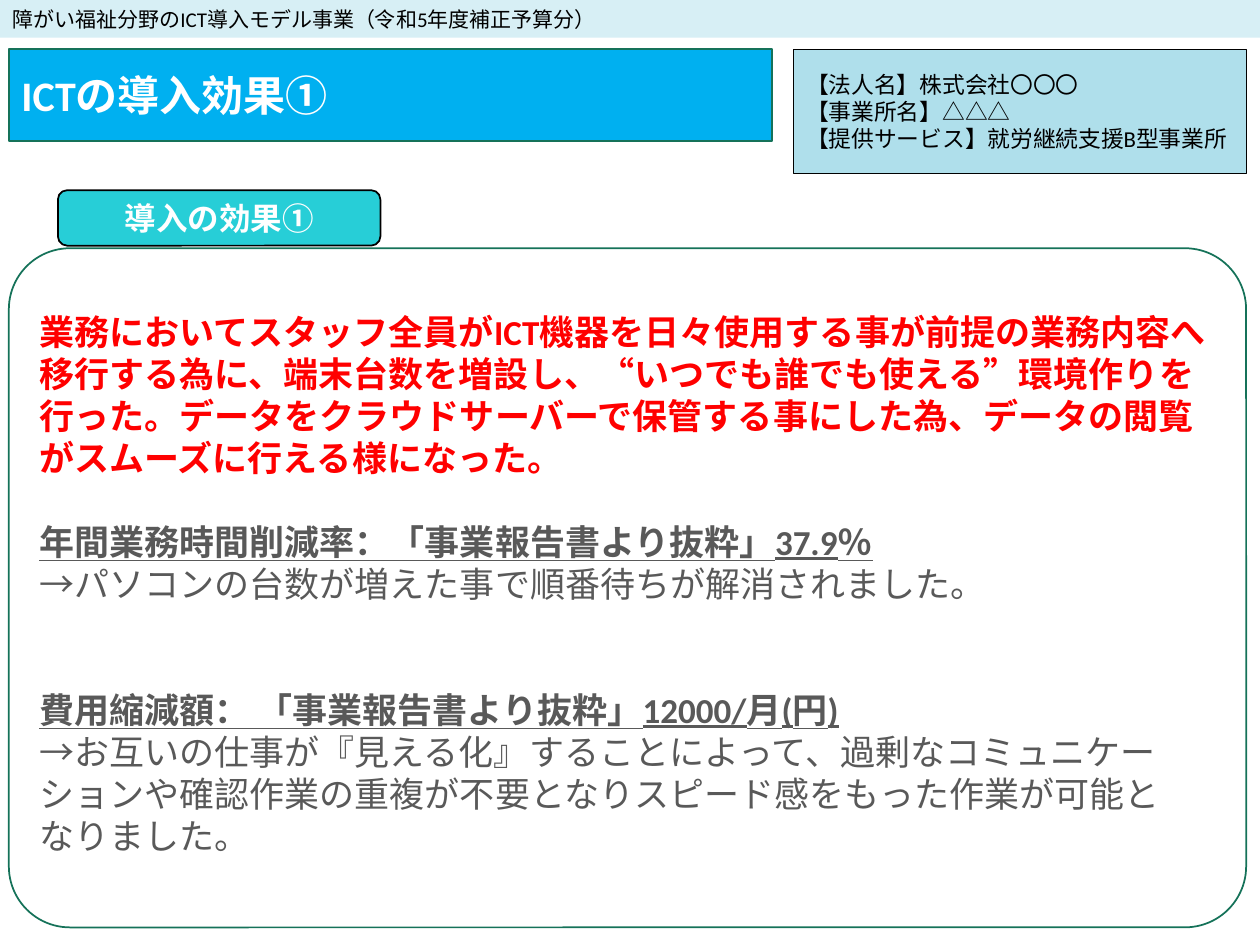
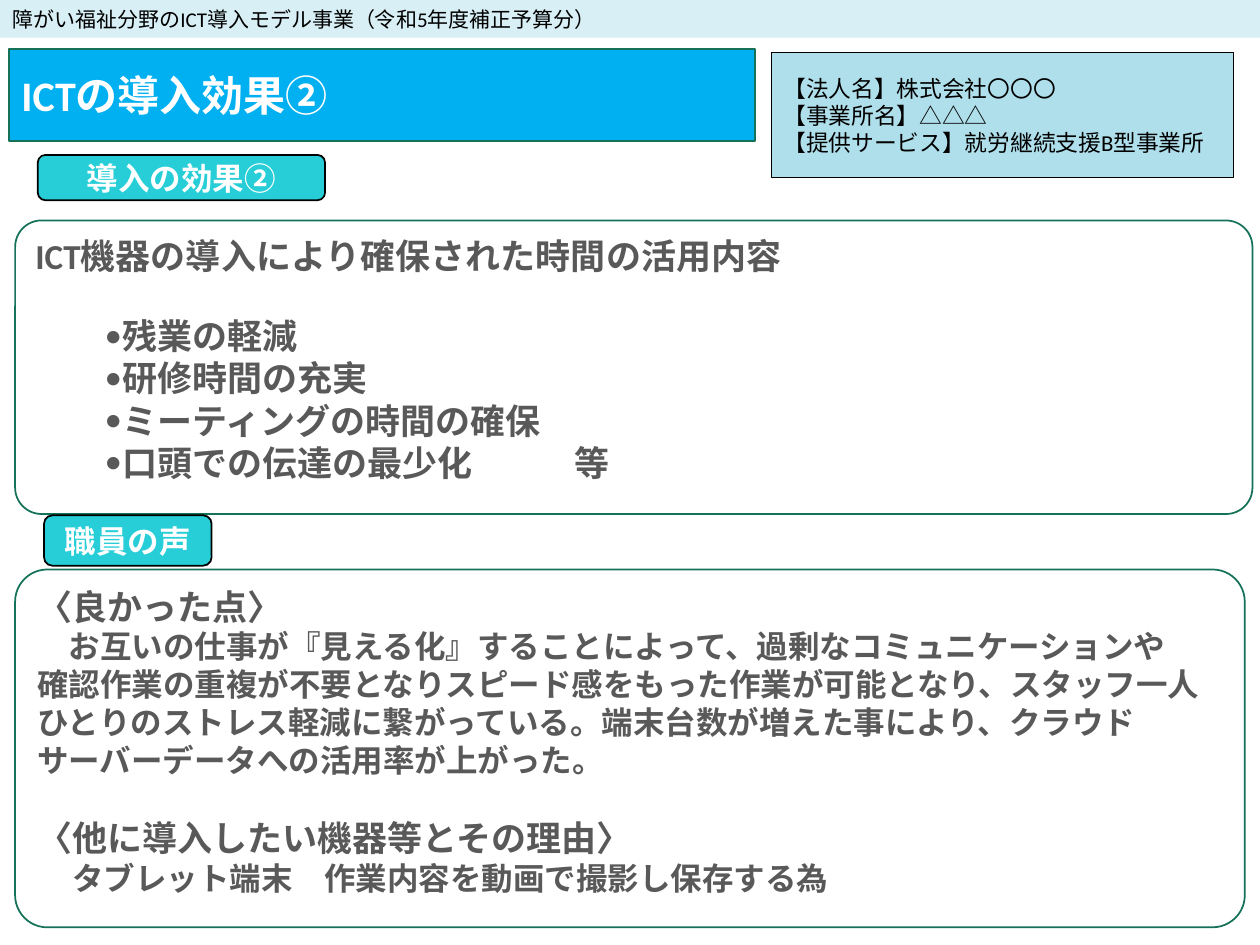
from lxml import etree
from pptx import Presentation
from pptx.dml.color import RGBColor
from pptx.enum.shapes import MSO_SHAPE
from pptx.enum.text import MSO_ANCHOR, MSO_AUTO_SIZE, PP_ALIGN
from pptx.oxml.ns import qn
from pptx.util import Inches, Pt

RECT, ROUNDED = MSO_SHAPE.RECTANGLE, MSO_SHAPE.ROUNDED_RECTANGLE
TOP, MIDDLE = MSO_ANCHOR.TOP, MSO_ANCHOR.MIDDLE
LEFT, CENTER = PP_ALIGN.LEFT, PP_ALIGN.CENTER
NO_AUTOFIT = MSO_AUTO_SIZE.NONE

FONT = "Calibri"
WHITE = RGBColor(0xFF, 0xFF, 0xFF)
BLACK = RGBColor(0, 0, 0)
RED = RGBColor(0xFF, 0, 0)
GRAY = RGBColor(0x59, 0x59, 0x59)
GREEN = RGBColor(0x15, 0x72, 0x59)
TITLE_BLUE = RGBColor(0x00, 0xB0, 0xF0)
BADGE_TEAL = RGBColor(0x27, 0xCE, 0xD7)
HEADER_BLUE = RGBColor(0xD7, 0xEF, 0xF5)
OFFICE_BLUE = RGBColor(0xAF, 0xDF, 0xEB)

# Content shared by the slides
HEADER = "障がい福祉分野のICT導入モデル事業（令和5年度補正予算分）"
OFFICE = [
    "【法人名】株式会社〇〇〇",
    "【事業所名】△△△",
    "【提供サービス】就労継続支援B型事業所",
]

# Paragraph styles
PLAIN = dict(size=20, color=GRAY)
BOLD = dict(PLAIN, bold=True)
SMALL = dict(BOLD, size=18)
METRIC = dict(BOLD, underline=True)
BULLET = dict(BOLD, left=0.66, first=-0.11, bullet="•", tab=4.28)

# Panels: box, top inset, badge, badge box, paragraphs as (text, style)
SLIDES = [
    dict(
        title="ICTの導入効果①", title_width=6.06, office_box=(6.3, 0.39, 3.59, 0.99),
        panels=[
            dict(box=(0.07, 1.97, 9.82, 5.39), inset=0.35,
                 badge="導入の効果①", badge_box=(0.46, 1.51, 2.56, 0.44),
                 text=[
                     ("業務においてスタッフ全員がICT機器を日々使用する事が前提の業務内容へ移行する為に、"
                      "端末台数を増設し、“いつでも誰でも使える”環境作りを行った。"
                      "データをクラウドサーバーで保管する事にした為、データの閲覧がスムーズに行える様になった。",
                      dict(BOLD, color=RED)),
                     ("年間業務時間削減率：「事業報告書より抜粋」37.9％", dict(METRIC, before=24)),
                     ("→パソコンの台数が増えた事で順番待ちが解消されました。", PLAIN),
                     ("費用縮減額： 「事業報告書より抜粋」12000/月(円)", dict(METRIC, before=48)),
                     ("→お互いの仕事が『見える化』することによって、過剰なコミュニケーションや"
                      "確認作業の重複が不要となりスピード感をもった作業が可能と", PLAIN),
                     ("なりました。", PLAIN),
                 ]),
        ]),
    dict(
        title="ICTの導入効果②", title_width=5.92, office_box=(6.12, 0.42, 3.67, 0.99),
        panels=[
            dict(box=(0.12, 1.75, 9.82, 2.33), inset=0.05,
                 badge="導入の効果②", badge_box=(0.3, 1.23, 2.28, 0.36),
                 text=[
                     ("ICT機器の導入により確保された時間の活用内容", BOLD),
                     ("残業の軽減", dict(BULLET, before=22)),
                     ("研修時間の充実", BULLET),
                     ("ミーティングの時間の確保", BULLET),
                     ("口頭での伝達の最少化\t等", BULLET),
                 ]),
            dict(box=(0.12, 4.52, 9.76, 2.84), inset=0.05,
                 badge="職員の声", badge_box=(0.35, 4.09, 1.33, 0.4),
                 text=[
                     ("〈良かった点〉", BOLD),
                     ("お互いの仕事が『見える化』することによって、過剰なコミュニケーションや",
                      dict(SMALL, first=0.25)),
                     ("確認作業の重複が不要となりスピード感をもった作業が可能となり、"
                      "スタッフ一人ひとりのストレス軽減に繋がっている。"
                      "端末台数が増えた事により、クラウド", SMALL),
                     ("サーバーデータへの活用率が上がった。", SMALL),
                     ("〈他に導入したい機器等とその理由〉", dict(BOLD, before=22)),
                     ("タブレット端末　作業内容を動画で撮影し保存する為", dict(SMALL, first=0.28)),
                 ]),
        ]),
]


def write(shape, paragraphs, anchor=MIDDLE, align=LEFT, inset=0.05):
    """Fill a shape with (text, style) paragraphs."""
    frame = shape.text_frame
    frame.text = "\n".join(text for text, _ in paragraphs)
    frame.word_wrap = True
    frame.auto_size = NO_AUTOFIT
    frame.vertical_anchor = anchor
    frame.margin_left = frame.margin_right = Inches(0.1)
    frame.margin_top, frame.margin_bottom = Inches(inset), Inches(0.05)
    for paragraph, (_, style) in zip(frame.paragraphs, paragraphs):
        paragraph.alignment = align
        paragraph.space_before = Pt(style.get("before", 0))
        props = paragraph._p.get_or_add_pPr()
        props.set("marL", str(Inches(style.get("left", 0))))
        props.set("indent", str(Inches(style.get("first", 0))))
        if "bullet" in style:
            etree.SubElement(props, qn("a:buFont"), typeface=FONT)
            etree.SubElement(props, qn("a:buChar"), char=style["bullet"])
            tabs = etree.SubElement(props, qn("a:tabLst"))
            etree.SubElement(tabs, qn("a:tab"), pos=str(Inches(style["tab"])), algn="l")
        else:
            etree.SubElement(props, qn("a:buNone"))
        for run in paragraph.runs:
            run.font.name = FONT
            run.font.size = Pt(style["size"])
            run.font.color.rgb = style["color"]
            run.font.bold = style.get("bold", False)
            run.font.underline = style.get("underline", False)


def paint(shape, fill, line=None, width=1):
    shape.fill.solid()
    shape.fill.fore_color.rgb = fill
    if line is None:
        shape.line.fill.background()
    else:
        shape.line.color.rgb = line
        shape.line.width = Pt(width)
    shape.shadow.inherit = False


def add_box(slide, kind, box, fill, line=None, width=1):
    shape = slide.shapes.add_shape(kind, *map(Inches, box))
    paint(shape, fill, line, width)
    return shape


def round_placeholder(placeholder, box, radius, fill):
    """Place a placeholder and give it a rounded outline."""
    placeholder.left, placeholder.top, placeholder.width, placeholder.height = map(Inches, box)
    outline = etree.SubElement(placeholder._element.spPr, qn("a:prstGeom"), prst="roundRect")
    guides = etree.SubElement(outline, qn("a:avLst"))
    etree.SubElement(guides, qn("a:gd"), name="adj", fmla=f"val {round(radius * 100000)}")
    paint(placeholder, fill, GREEN)


def build_slide(prs, content):
    panels = content["panels"]
    layout = prs.slide_layouts.get_by_name("Title and Content" if len(panels) == 1 else "Two Content")
    slide = prs.slides.add_slide(layout)

    # Title
    title = slide.shapes.title
    round_placeholder(title, (0.07, 0.39, content["title_width"], 0.73), 0.1, TITLE_BLUE)
    write(title, [(content["title"], dict(size=24, color=WHITE, bold=True))])

    # Panels with their badges
    bodies = [p for p in slide.placeholders if p.placeholder_format.idx > 0]
    for body, panel in zip(bodies, panels):
        round_placeholder(body, panel["box"], 0.09, WHITE)
        write(body, panel["text"], anchor=TOP, inset=panel["inset"])
        badge = add_box(slide, ROUNDED, panel["badge_box"], BADGE_TEAL, BLACK)
        write(badge, [(panel["badge"], dict(size=18, color=WHITE, bold=True))], align=CENTER)

    # Header band and office details
    header = add_box(slide, RECT, (0, 0, 10, 0.3), HEADER_BLUE)
    write(header, [(HEADER, dict(size=12, color=BLACK))])
    office = add_box(slide, RECT, content["office_box"], OFFICE_BLUE, BLACK, 0.5)
    write(office, [(line, dict(size=13, color=BLACK)) for line in OFFICE])


def main():
    prs = Presentation()
    prs.slide_width, prs.slide_height = Inches(10), Inches(7.5)
    for content in SLIDES:
        build_slide(prs, content)
    prs.save("out.pptx")


if __name__ == "__main__":
    main()
